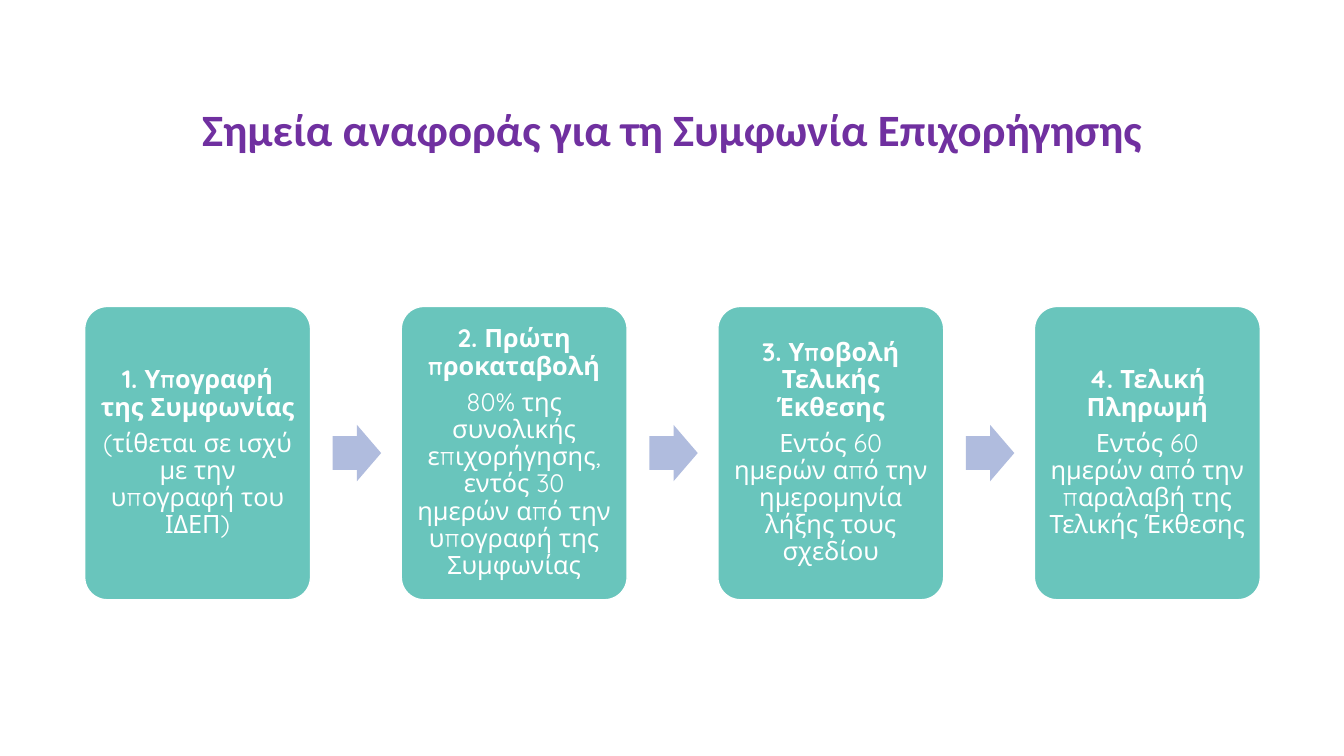
from dataclasses import dataclass

from pptx import Presentation
from pptx.dml.color import RGBColor
from pptx.enum.shapes import MSO_SHAPE
from pptx.enum.text import MSO_ANCHOR, PP_ALIGN
from pptx.util import Inches, Pt


@dataclass(frozen=True)
class Theme:
    title_color: RGBColor = RGBColor.from_string("7030A0")
    card: RGBColor = RGBColor.from_string("69C5BC")
    arrow: RGBColor = RGBColor.from_string("B0BCDE")
    white: RGBColor = RGBColor.from_string("FFFFFF")
    title_font: str = "Calibri"
    card_font: str = "Quicksand"
    title_size: Pt = Pt(32)
    card_size: Pt = Pt(18)
    card_gap: Pt = Pt(6.3)


THEME = Theme()

TITLE = "Σημεία αναφοράς για τη Συμφωνία Επιχορήγησης"
STEPS = [
    ("1. Υπογραφή της Συμφωνίας",
     "(τίθεται σε ισχύ με την υπογραφή του ΙΔΕΠ)"),
    ("2. Πρώτη προκαταβολή",
     "80% της συνολικής επιχορήγησης, εντός 30 ημερών από την υπογραφή της Συμφωνίας"),
    ("3. Υποβολή Τελικής Έκθεσης",
     "Εντός 60 ημερών από την ημερομηνία λήξης τους σχεδίου"),
    ("4. Τελική Πληρωμή",
     "Εντός 60 ημερών από την παραλαβή της Τελικής Έκθεσης"),
]

FIRST_LEFT, LAST_LEFT = 0.84, 10.26
PITCH = (LAST_LEFT - FIRST_LEFT) / (len(STEPS) - 1)
CARD_TOP, CARD_W, CARD_H = 3.04, 2.24, 2.91
ARROW_OFFSET, ARROW_W, ARROW_H = 2.46, 0.48, 0.56
CARD_INSET = 0.07


def write_paragraph(p, text, font, size, color, bold):
    p.alignment = PP_ALIGN.CENTER
    p.line_spacing = 0.9
    r = p.add_run()
    r.text = text
    r.font.name = font
    r.font.size = size
    r.font.color.rgb = color
    r.font.bold = bold


def add_title(slide):
    box = slide.shapes.add_textbox(Inches(1.67), Inches(0.86), Inches(10), Inches(0.74))
    tf = box.text_frame
    tf.word_wrap = True
    tf.vertical_anchor = MSO_ANCHOR.BOTTOM
    write_paragraph(tf.paragraphs[0], TITLE, THEME.title_font,
                    THEME.title_size, THEME.title_color, True)


def add_filled_shape(slide, kind, left, top, width, height, fill):
    sp = slide.shapes.add_shape(kind, Inches(left), Inches(top), Inches(width), Inches(height))
    sp.shadow.inherit = False
    sp.fill.solid()
    sp.fill.fore_color.rgb = fill
    return sp


def add_card(slide, left, heading, detail):
    sp = add_filled_shape(slide, MSO_SHAPE.ROUNDED_RECTANGLE, left, CARD_TOP,
                          CARD_W, CARD_H, THEME.card)
    sp.adjustments[0] = 0.1
    sp.line.color.rgb = THEME.white
    sp.line.width = Pt(1)
    tf = sp.text_frame
    tf.word_wrap = True
    tf.vertical_anchor = MSO_ANCHOR.MIDDLE
    tf.margin_left = tf.margin_right = Inches(CARD_INSET)
    tf.margin_top = tf.margin_bottom = Inches(CARD_INSET)
    for p, text, bold in ((tf.paragraphs[0], heading, True),
                          (tf.add_paragraph(), detail, False)):
        p.space_after = THEME.card_gap
        write_paragraph(p, text, THEME.card_font, THEME.card_size, THEME.white, bold)


def add_arrow(slide, left):
    top = CARD_TOP + (CARD_H - ARROW_H) / 2
    sp = add_filled_shape(slide, MSO_SHAPE.RIGHT_ARROW, left, top,
                          ARROW_W, ARROW_H, THEME.arrow)
    sp.adjustments[0] = 0.6
    sp.adjustments[1] = 0.5
    sp.line.fill.background()


def main():
    prs = Presentation()
    prs.slide_width = Inches(13.33)
    prs.slide_height = Inches(7.5)
    slide = prs.slides.add_slide(prs.slide_layouts[6])
    add_title(slide)
    for i, (heading, detail) in enumerate(STEPS):
        left = FIRST_LEFT + i * PITCH
        if i > 0:
            add_arrow(slide, left - PITCH + ARROW_OFFSET)
        add_card(slide, left, heading, detail)
    prs.save("out.pptx")


if __name__ == "__main__":
    main()
